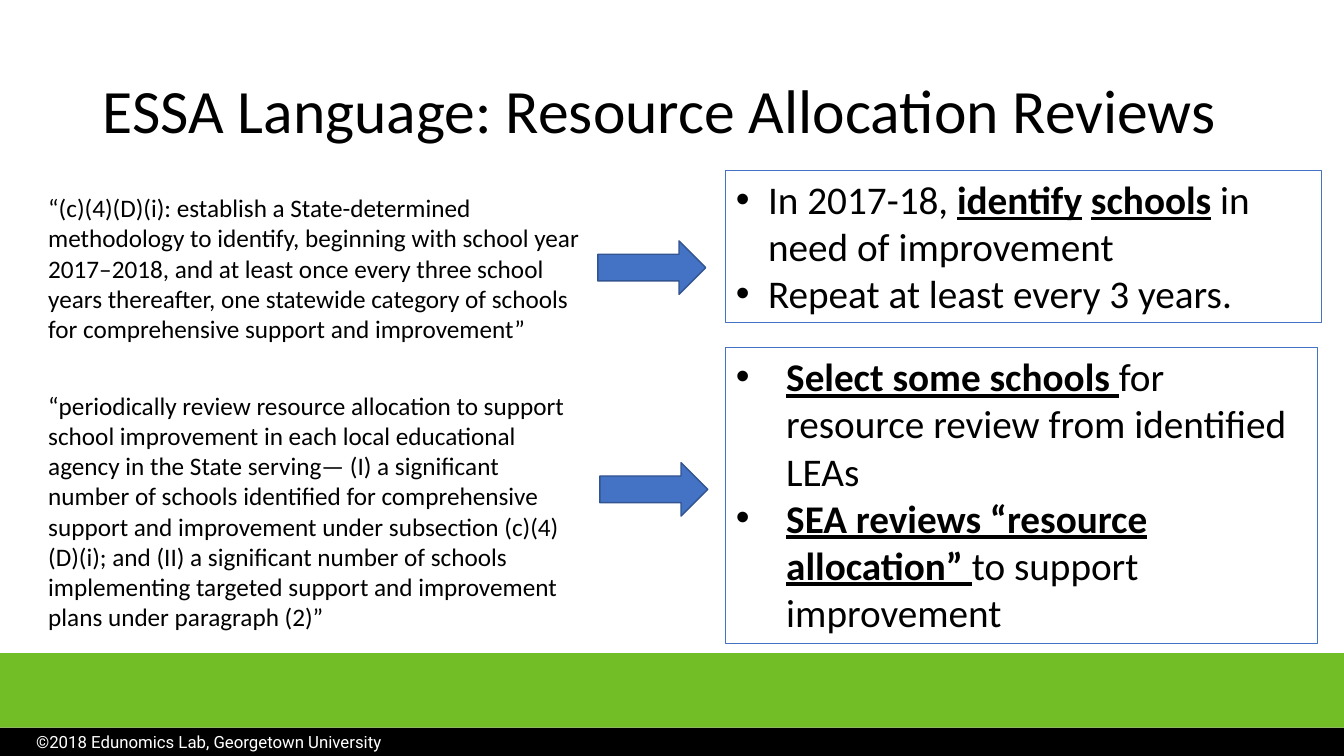
from dataclasses import dataclass
from typing import NamedTuple

from lxml.etree import SubElement
from pptx import Presentation
from pptx.dml.color import RGBColor
from pptx.enum.shapes import MSO_SHAPE as Preset
from pptx.enum.text import MSO_ANCHOR as Anchor, PP_ALIGN as Align
from pptx.oxml.ns import qn
from pptx.util import Inches, Pt


@dataclass(frozen=True)
class Theme:
    black: str = "000000"
    white: str = "FFFFFF"
    green: str = "72BE26"
    blue: str = "4472C4"
    dark_blue: str = "325491"
    body_font: str = "Calibri"
    footer_font: str = "Roboto"
    title_size: int = 44
    summary_size: int = 28
    quote_size: int = 18
    footer_size: int = 12


class Box(NamedTuple):
    """A region of the slide, in inches."""
    left: float
    top: float
    width: float
    height: float

    def lengths(self):
        return [Inches(side) for side in self]


THEME = Theme()
SLIDE_W, SLIDE_H = 13.33, 7.5
QUOTE_LEFT, ARROW_LEFT, SUMMARY_LEFT = 0.38, 5.93, 7.2
ARROW_W, ARROW_H = 1.07, 0.53

# Each row pairs a quotation with its summary; emphasised pieces are marked True.
ROWS = [
    dict(
        quote="“(c)(4)(D)(i): establish a State-determined methodology to identify, "
              "beginning with school year 2017–2018, and at least once every three "
              "school years thereafter, one statewide category of schools for "
              "comprehensive support and improvement”",
        quote_box=Box(QUOTE_LEFT, 1.86, 5.55, 2.13),
        arrow_box=Box(ARROW_LEFT, 2.39, ARROW_W, ARROW_H),
        summary=[
            [("In 2017-18, ", False), ("identify", True), (" ", False),
             ("schools", True), (" in need of improvement", False)],
            [("Repeat at least every 3 years.", False)],
        ],
        summary_box=Box(SUMMARY_LEFT, 1.69, 5.91, 1.51),
        indent=0.32,
    ),
    dict(
        quote="“periodically review resource allocation to support school improvement "
              "in each local educational agency in the State serving— (I) a significant "
              "number of schools identified for comprehensive support and improvement "
              "under subsection (c)(4)(D)(i); and (II) a significant number of schools "
              "implementing targeted support and improvement plans under paragraph (2)”",
        quote_box=Box(QUOTE_LEFT, 3.82, 5.35, 2.58),
        arrow_box=Box(ARROW_LEFT + 0.02, 4.59, ARROW_W, ARROW_H),
        summary=[
            [("Select some schools ", True),
             ("for resource review from identified LEAs", False)],
            [("SEA reviews “resource allocation” ", True),
             ("to support improvement", False)],
        ],
        summary_box=Box(SUMMARY_LEFT, 3.45, 5.87, 2.93),
        indent=0.5,
    ),
]


def style(font, size, color=THEME.black, name=THEME.body_font):
    font.size, font.name = Pt(size), name
    font.color.rgb = RGBColor.from_string(color)


def add_preset(slide, preset, box, fill=None, line=None, line_width=1.0):
    shape = slide.shapes.add_shape(preset, *box.lengths())
    shape.shadow.inherit = False
    if fill:
        shape.fill.solid()
        shape.fill.fore_color.rgb = RGBColor.from_string(fill)
    else:
        shape.fill.background()
    if line:
        shape.line.color.rgb = RGBColor.from_string(line)
        shape.line.width = Pt(line_width)
    else:
        shape.line.fill.background()
    return shape


def add_label(slide, box, text, size, anchor=Anchor.TOP, **font_style):
    frame = slide.shapes.add_textbox(*box.lengths()).text_frame
    frame.word_wrap = True
    frame.vertical_anchor = anchor
    frame.text = text
    style(frame.paragraphs[0].runs[0].font, size, **font_style)
    return frame


def add_bullet(paragraph, indent):
    properties = paragraph._p.get_or_add_pPr()
    properties.set("marL", str(Inches(indent)))
    properties.set("indent", str(-Inches(indent)))
    SubElement(properties, qn("a:buFont"), typeface="Arial")
    SubElement(properties, qn("a:buChar"), char="•")


def add_summary(slide, box, bullets, indent):
    frame = add_preset(slide, Preset.RECTANGLE, box,
                       line=THEME.blue, line_width=0.75).text_frame
    frame.word_wrap = True
    frame.vertical_anchor = Anchor.TOP
    for index, pieces in enumerate(bullets):
        paragraph = frame.add_paragraph() if index else frame.paragraphs[0]
        paragraph.alignment = Align.LEFT
        add_bullet(paragraph, indent)
        for text, emphasised in pieces:
            run = paragraph.add_run()
            run.text = text
            style(run.font, THEME.summary_size)
            run.font.bold = run.font.underline = emphasised


def add_title(slide, box):
    frame = add_label(slide, box, "ESSA Language: Resource Allocation Reviews",
                      THEME.title_size, Anchor.MIDDLE)
    frame.paragraphs[0].line_spacing = 0.9


def add_row(slide, quote, quote_box, arrow_box, summary, summary_box, indent):
    add_label(slide, quote_box, quote, THEME.quote_size)
    add_preset(slide, Preset.RIGHT_ARROW, arrow_box, THEME.blue, THEME.dark_blue)
    add_summary(slide, summary_box, summary, indent)


def add_footer(slide, box):
    """A green band above a black strip that carries the copyright line."""
    strip_h = 0.28
    band_h = box.height - strip_h
    strip_top = box.top + band_h
    add_preset(slide, Preset.RECTANGLE, box._replace(height=band_h), THEME.green)
    add_preset(slide, Preset.RECTANGLE,
               box._replace(top=strip_top, height=strip_h), THEME.black)
    add_label(slide, Box(box.left + 0.26, strip_top - 0.01, 6.18, 0.3),
              "©2018 Edunomics Lab, Georgetown University", THEME.footer_size,
              color=THEME.white, name=THEME.footer_font)


def main():
    deck = Presentation()
    deck.slide_width, deck.slide_height = Inches(SLIDE_W), Inches(SLIDE_H)
    slide = deck.slides.add_slide(deck.slide_layouts[6])
    add_title(slide, Box(0.92, 0.4, 11.5, 1.45))
    add_footer(slide, Box(0, 6.48, SLIDE_W, SLIDE_H - 6.48))
    for row in ROWS:
        add_row(slide, **row)
    deck.save("out.pptx")


if __name__ == "__main__":
    main()
